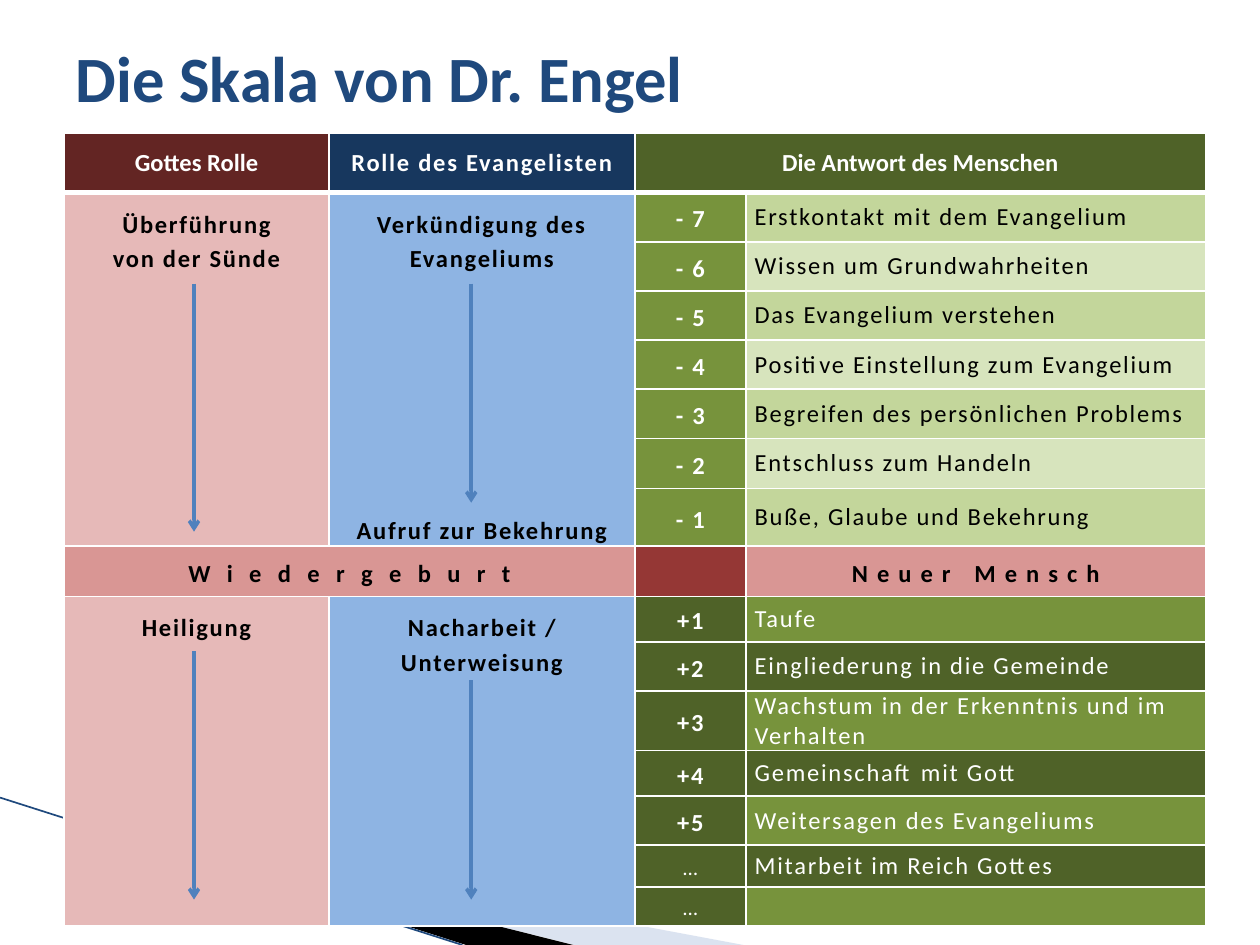
from pptx import Presentation
from pptx import util as u
from pptx.dml.color import RGBColor
from pptx.enum import shapes, text
from pptx.oxml import parse_xml
from pptx.oxml.ns import nsdecls, qn
from lxml import etree

WHITE = RGBColor(0xFF, 0xFF, 0xFF)
BLACK = RGBColor(0x00, 0x00, 0x00)
NAVY = RGBColor(0x1F, 0x49, 0x7D)
PALE_BLUE = RGBColor(0xA7, 0xB9, 0xDB)
ARROW_BLUE = RGBColor(0x4F, 0x81, 0xBD)
MAROON = RGBColor(0x63, 0x25, 0x23)
DARK_BLUE = RGBColor(0x17, 0x37, 0x5E)
LIGHT_BLUE = RGBColor(0x8E, 0xB4, 0xE3)
PINK = RGBColor(0xE6, 0xB9, 0xB8)
ROSE = RGBColor(0xD9, 0x96, 0x94)
RED = RGBColor(0x95, 0x37, 0x35)
DARK_GREEN = RGBColor(0x4F, 0x62, 0x28)
GREEN = RGBColor(0x77, 0x93, 0x3C)
LIGHT_GREEN = RGBColor(0xC3, 0xD6, 0x9B)
PALE_GREEN = RGBColor(0xD7, 0xE4, 0xBD)

CENTER, LEFT = text.PP_ALIGN.CENTER, text.PP_ALIGN.LEFT
TOP, MIDDLE = text.MSO_ANCHOR.TOP, text.MSO_ANCHOR.MIDDLE

COLUMN_WIDTHS = [2.1, 2.43, 0.88, 3.65]
ROW_HEIGHTS = [0.47] + [0.39] * 5 + [0.4, 0.42, 0.4,
               0.36, 0.39, 0.47, 0.36, 0.39, 0.33, 0.31]
REBIRTH_ROW = 8

BEFORE = ["Erstkontakt mit dem Evangelium", "Wissen um Grundwahrheiten",
          "Das Evangelium verstehen", "Positive Einstellung zum Evangelium",
          "Begreifen des persönlichen Problems", "Entschluss zum Handeln",
          "Buße, Glaube und Bekehrung"]
AFTER = [("+1", "Taufe"), ("+2", "Eingliederung in die Gemeinde"),
         ("+3", "Wachstum in der Erkenntnis und im Verhalten"),
         ("+4", "Gemeinschaft mit Gott"), ("+5", "Weitersagen des Evangeliums"),
         ("…", "Mitarbeit im Reich Gottes"), ("…", "")]


def apply(target, values):
    for name, value in values.items():
        setattr(target, name, value)


def add_run(paragraph, words, color, size=14, bold=True, tracking=1.0):
    run = paragraph.add_run()
    run.text = words
    apply(run.font, {"name": "Calibri", "size": u.Pt(size), "bold": bold})
    run.font.color.rgb = color
    run.font._element.set("spc", str(round(tracking * 100)))


def fill_cell(cell, fill, lines=(), color=BLACK, align=CENTER, anchor=MIDDLE,
              spacing=1.15, margin_top=0, **run_format):
    """Each line is a string or a list of (words, tracking) pairs."""
    apply(cell, {"margin_left": u.Inches(0.07), "margin_right": u.Inches(0.07),
                 "margin_top": u.Inches(margin_top), "margin_bottom": 0,
                 "vertical_anchor": anchor})
    cell.fill.solid()
    cell.fill.fore_color.rgb = fill
    frame = cell.text_frame
    for i, line in enumerate(lines):
        paragraph = frame.add_paragraph() if i else frame.paragraphs[0]
        apply(paragraph, {"alignment": align, "line_spacing": spacing})
        if isinstance(line, str):
            add_run(paragraph, line, color, **run_format)
        else:
            for words, tracking in line:
                add_run(paragraph, words, color, tracking=tracking)


def set_borders(cell, row):
    widths = {"lnL": 1, "lnR": 1, "lnT": 3 if row == 1 else 1,
              "lnB": 3 if row == 0 else 1}
    properties = cell._tc.get_or_add_tcPr()
    for i, (side, width) in enumerate(widths.items()):
        properties.insert(i, parse_xml(
            f'<a:{side} {nsdecls("a")} w="{u.Pt(width)}"><a:solidFill>'
            f'<a:srgbClr val="{WHITE}"/></a:solidFill></a:{side}>'))


def add_role(table, row, column, fill, lines):
    """A tall cell that spans one half of the scale."""
    cell = table.cell(row, column)
    cell.merge(table.cell(row + 6, column))
    fill_cell(cell, fill, lines, anchor=TOP, margin_top=0.1)
    return cell


def add_step(table, row, number, answer, number_fill, answer_fill, answer_color):
    small = number == "…"
    fill_cell(table.cell(row, 2), number_fill, [number], WHITE,
              size=12 if small else 14, bold=not small)
    fill_cell(table.cell(row, 3), answer_fill, [answer] if answer else [],
              answer_color, align=LEFT, spacing=1.0, bold=False)


def add_scale(slide):
    table = slide.shapes.add_table(
        len(ROW_HEIGHTS), len(COLUMN_WIDTHS), u.Inches(0.51), u.Inches(1.06),
        u.Inches(sum(COLUMN_WIDTHS)), u.Inches(sum(ROW_HEIGHTS))).table
    apply(table, {"first_row": False, "horz_banding": False})
    for column, width in zip(table.columns, COLUMN_WIDTHS):
        column.width = u.Inches(width)
    for row, height in zip(table.rows, ROW_HEIGHTS):
        row.height = u.Inches(height)

    # Header
    table.cell(0, 2).merge(table.cell(0, 3))
    headers = [("Gottes Rolle", MAROON, 0), ("Rolle des Evangelisten", DARK_BLUE, 1),
               ("Die Antwort des Menschen", DARK_GREEN, 0)]
    for column, (words, fill, tracking) in enumerate(headers):
        fill_cell(table.cell(0, column), fill, [words], WHITE, spacing=1.0,
                  tracking=tracking)

    # Roles before and after the rebirth
    add_role(table, 1, 0, PINK, ["Überführung", "von der Sünde"])
    preaching = add_role(table, 1, 1, LIGHT_BLUE,
                         ["Verkündigung des Evangeliums", "Aufruf zur Bekehrung"])
    preaching.text_frame.paragraphs[1].space_before = u.Pt(136)
    add_role(table, REBIRTH_ROW + 1, 0, PINK, ["Heiligung"])
    add_role(table, REBIRTH_ROW + 1, 1, LIGHT_BLUE, ["Nacharbeit /", "Unterweisung"])

    # Rebirth row
    table.cell(REBIRTH_ROW, 0).merge(table.cell(REBIRTH_ROW, 1))
    fill_cell(table.cell(REBIRTH_ROW, 0), ROSE, ["W i e d e r g e b u r t"],
              tracking=3.1)
    fill_cell(table.cell(REBIRTH_ROW, 2), RED)
    fill_cell(table.cell(REBIRTH_ROW, 3), ROSE,
              [[("N e u e r", 1), (" ", 9.3), ("M e n s c h", 1)]])

    # Steps of the scale
    for i, answer in enumerate(BEFORE):
        add_step(table, 1 + i, f"- {7 - i}", answer, GREEN,
                 (LIGHT_GREEN, PALE_GREEN)[i % 2], BLACK)
    for i, (number, answer) in enumerate(AFTER):
        add_step(table, REBIRTH_ROW + 1 + i, number, answer, DARK_GREEN,
                 (GREEN, DARK_GREEN)[i % 2], WHITE)

    for row in range(len(ROW_HEIGHTS)):
        for column in range(len(COLUMN_WIDTHS)):
            set_borders(table.cell(row, column), row)


def add_line(slide, start, end, color, width, arrow=False):
    line = slide.shapes.add_connector(
        shapes.MSO_CONNECTOR.STRAIGHT, *map(u.Inches, start + end))
    line.line.color.rgb = color
    line.line.width = u.Pt(width)
    if arrow:
        etree.SubElement(line.line._get_or_add_ln(), qn("a:tailEnd"), type="arrow")
    etree.SubElement(line._element.spPr, qn("a:effectLst"))


def add_wedge(slide, points, color, opacity=100):
    start, *rest = [tuple(map(u.Inches, point)) for point in points]
    builder = slide.shapes.build_freeform(*start)
    builder.add_line_segments(rest, close=True)
    wedge = builder.convert_to_shape()
    wedge.shadow.inherit = False
    wedge.fill.solid()
    wedge.fill.fore_color.rgb = color
    wedge.line.fill.background()
    if opacity < 100:
        color_node = wedge._element.spPr.find(".//" + qn("a:srgbClr"))
        etree.SubElement(color_node, qn("a:alpha"), val=str(opacity * 1000))


def add_title(slide, words):
    title = slide.shapes.title
    apply(title, {"left": u.Inches(0.5), "top": u.Inches(0.3),
                  "width": u.Inches(9), "height": u.Inches(0.61)})
    apply(title.text_frame, {"auto_size": text.MSO_AUTO_SIZE.NONE,
                             "vertical_anchor": MIDDLE})
    paragraph = title.text_frame.paragraphs[0]
    paragraph.alignment = LEFT
    add_run(paragraph, words, NAVY, size=36.9, tracking=0)


def main():
    prs = Presentation()
    prs.slide_width, prs.slide_height = u.Inches(10), u.Inches(7.5)
    slide = prs.slides.add_slide(prs.slide_layouts[5])

    # Corner decoration
    add_wedge(slide, [(0.55, 6.5), (5.9, 7.5), (4.56, 7.5)], PALE_BLUE, 40)
    add_wedge(slide, [(0.53, 6.49), (4.55, 7.5), (3.7, 7.5)], BLACK)
    add_line(slide, (0, 6.33), (3.67, 7.5), NAVY, 0.95)

    add_scale(slide)
    add_title(slide, "Die Skala von Dr. Engel")

    # Arrows down the role columns
    for x, top, bottom in [(1.54, 2.25, 4.22), (3.74, 2.25, 3.99),
                           (1.54, 5.17, 7.14), (3.74, 5.4, 7.14)]:
        add_line(slide, (x, top), (x, bottom), ARROW_BLUE, 2, arrow=True)

    prs.save("out.pptx")


if __name__ == "__main__":
    main()
